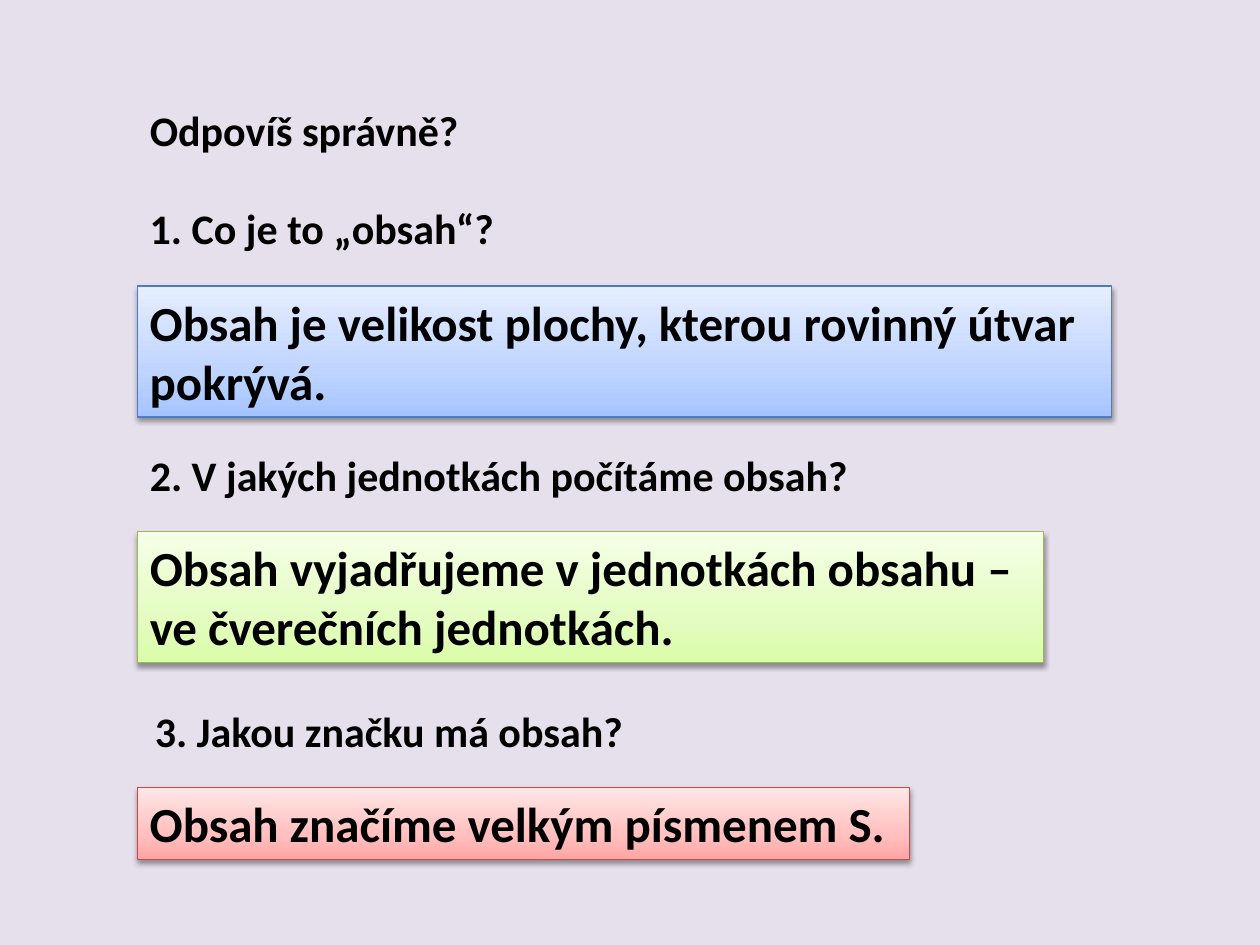
from copy import deepcopy
from dataclasses import dataclass

from lxml import etree
from pptx import Presentation, util as u
from pptx.dml.color import RGBColor
from pptx.enum import shapes, text
from pptx.oxml import parse_xml
from pptx.oxml.ns import nsdecls, qn


@dataclass(frozen=True)
class Theme:
    font: str = "Calibri"
    ink: str = "000000"
    background: str = "E6E0EC"
    question_size: int = 24
    answer_size: int = 28
    blue: tuple = ("4B7EBC", "A4C4FF", "BFD4FF", "E6EEFF")
    green: tuple = ("98B955", "DAFDA7", "E4FCC2", "F5FFE7")
    red: tuple = ("BF4C48", "FFA6A5", "FFC0BF", "FFE7E7")


class QuizSlide:
    """Draws questions and answers on a slide, placed in shares of its size."""

    def __init__(self, prs, theme):
        self.prs, self.theme = prs, theme
        self.s = prs.slides.add_slide(prs.slide_layouts[6])
        fill = self.s.background.fill
        fill.solid()
        fill.fore_color.rgb = RGBColor.from_string(theme.background)

    def box(self, left, top, width, height):
        w, h = self.prs.slide_width, self.prs.slide_height
        return [round(v) for v in (left * w, top * h, width * w, height * h)]

    def label(self, sp, words, size, wrap):
        tf = sp.text_frame
        frame = {"word_wrap": wrap, "auto_size": text.MSO_AUTO_SIZE.SHAPE_TO_FIT_TEXT,
                 "vertical_anchor": text.MSO_ANCHOR.TOP}
        for name, value in frame.items():
            setattr(tf, name, value)
        p = tf.paragraphs[0]
        p.alignment = text.PP_ALIGN.LEFT
        r = p.add_run()
        r.text = words
        style = {"name": self.theme.font, "size": u.Pt(size), "bold": True}
        for name, value in style.items():
            setattr(r.font, name, value)
        r.font.color.rgb = RGBColor.from_string(self.theme.ink)

    def question(self, words, *place):
        sp = self.s.shapes.add_textbox(*self.box(*place))
        self.label(sp, words, self.theme.question_size, False)

    def answer(self, words, colors, *place, wrap=True):
        sp = self.s.shapes.add_shape(shapes.MSO_SHAPE.RECTANGLE, *self.box(*place))
        outline, *shades = colors
        self.gradient(sp, shades)
        sp.line.color.rgb = RGBColor.from_string(outline)
        sp.line.width = u.Pt(0.75)
        self.shadow(sp)
        self.label(sp, words, self.theme.answer_size, wrap)

    def gradient(self, sp, shades):
        sp.fill.gradient()
        sp.fill.gradient_angle = 90
        stops = sp._element.spPr.find(".//" + qn("a:gsLst"))
        middle = deepcopy(stops[0])
        middle.set("pos", "35000")
        stops.insert(1, middle)
        for stop, shade in zip(sp.fill.gradient_stops, shades):
            stop.color.rgb = RGBColor.from_string(shade)

    def shadow(self, sp):
        sp.shadow.inherit = False
        effects = sp._element.spPr.find(qn("a:effectLst"))
        outer = parse_xml(
            f'<a:outerShdw {nsdecls("a")} blurRad="{u.Pt(3.1)}" dist="{u.Pt(1.6)}" '
            'dir="5400000" rotWithShape="0"/>')
        color = etree.SubElement(outer, qn("a:srgbClr"), val=self.theme.ink)
        etree.SubElement(color, qn("a:alpha"), val="38000")
        effects.append(outer)


def main():
    prs = Presentation()
    prs.slide_width, prs.slide_height = u.Inches(10), u.Inches(7.5)
    theme = Theme()
    quiz = QuizSlide(prs, theme)
    left, row, tall = 0.109, 0.5 / 7.5, 1.04 / 7.5
    quiz.question("Odpovíš správně?", left, 0.78 / 7.5, 0.268, row)
    quiz.question("1. Co je to „obsah“?", left, 1.56 / 7.5, 0.296, row)
    quiz.question("2. V jakých jednotkách počítáme obsah?", left, 3.52 / 7.5, 0.579, row)
    quiz.question("3. Jakou značku má obsah?", 0.113, 5.55 / 7.5, 0.395, row)
    quiz.answer("Obsah je velikost plochy, kterou rovinný útvar pokrývá.",
                theme.blue, left, 2.27 / 7.5, 0.773, tall)
    quiz.answer("Obsah vyjadřujeme v jednotkách obsahu – ve čverečních jednotkách.",
                theme.green, left, 4.22 / 7.5, 0.719, tall)
    quiz.answer("Obsah značíme velkým písmenem S.",
                theme.red, left, 6.25 / 7.5, 0.613, 0.57 / 7.5, wrap=False)
    prs.save("out.pptx")


if __name__ == "__main__":
    main()
